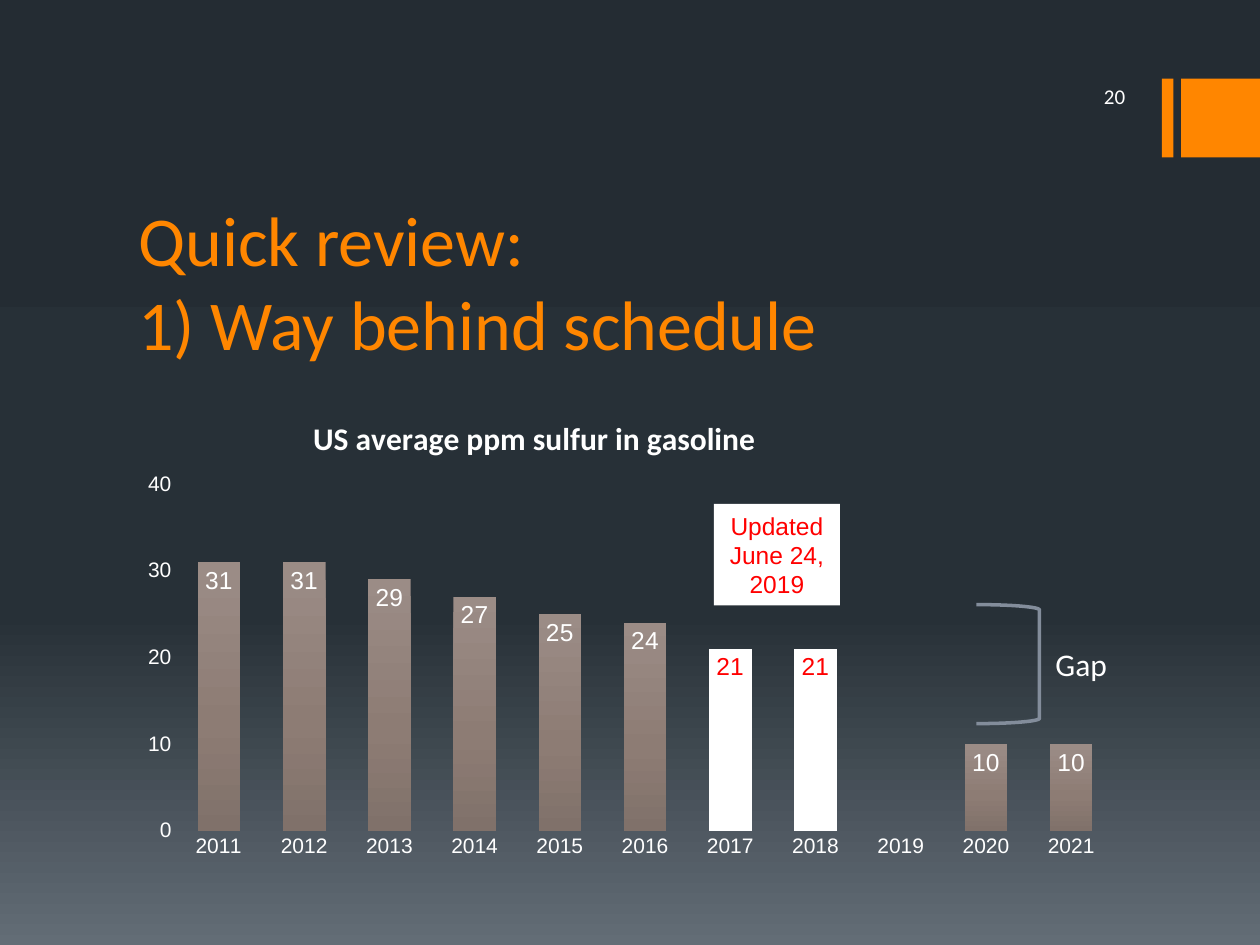
from copy import deepcopy

from lxml import etree
from pptx import Presentation
from pptx.chart.data import CategoryChartData
from pptx.dml.color import RGBColor
from pptx.enum.chart import XL_CHART_TYPE as ChartType, XL_LABEL_POSITION as LabelPos
from pptx.enum.chart import XL_TICK_MARK as TickMark
from pptx.enum.shapes import MSO_SHAPE as Preset
from pptx.enum.text import MSO_ANCHOR as Anchor, PP_ALIGN as Align
from pptx.oxml.ns import qn
from pptx.util import Pt

ORANGE, WHITE, RED, SLATE = "FF8600", "FFFFFF", "FF0000", "838D9B"
BACKDROP = [(0, "242C33"), (0.65, "273037"), (1, "636D76")]
BAR_SHADE = [(0, "9B8C86"), (0.6, "8D7C74"), (1, "80716A")]
SULFUR = {2011: 31, 2012: 31, 2013: 29, 2014: 27, 2015: 25, 2016: 24,
          2017: 21, 2018: 21, 2019: 0, 2020: 10, 2021: 10}
UPDATED_YEARS = (2017, 2018)


def rgb(code):
    """Turn a hex string into a colour."""
    return RGBColor.from_string(code)


def paint(fill, code):
    """Give a fill one solid colour."""
    fill.solid()
    fill.fore_color.rgb = rgb(code)


def shade(fill, stops):
    """Give a fill a three-stop gradient from top to bottom."""
    fill.gradient()
    fill.gradient_angle = 270
    last = fill.gradient_stops[1]._gs
    last.addnext(deepcopy(last))
    for stop, (position, code) in zip(fill.gradient_stops, stops):
        stop.position = position
        stop.color.rgb = rgb(code)


def style(font, name, size, code, bold=False):
    """Set the face, size, weight and colour of a font."""
    font.name, font.size, font.bold = name, Pt(size), bold
    font.color.rgb = rgb(code)


def write(frame, words, face, size, code, align=Align.LEFT, anchor=Anchor.TOP):
    """Put one formatted paragraph into a text frame."""
    frame.word_wrap = True
    frame.vertical_anchor = anchor
    paragraph = frame.paragraphs[0]
    paragraph.text = words
    paragraph.alignment = align
    for run in paragraph.runs:
        style(run.font, face, size, code)


def add_label(slide, box, words, size, code, **placing):
    """Add a Calibri text box."""
    label = slide.shapes.add_textbox(*map(Pt, box))
    write(label.text_frame, words, "Calibri", size, code, **placing)


def add_block(slide, box, code):
    """Add a borderless filled rectangle."""
    block = slide.shapes.add_shape(Preset.RECTANGLE, *map(Pt, box))
    block.shadow.inherit = False
    paint(block.fill, code)
    block.line.fill.background()
    return block


def add_bracket(slide, box):
    """Add the bracket that marks the gap."""
    bracket = slide.shapes.add_shape(Preset.RIGHT_BRACKET, *map(Pt, box))
    bracket.shadow.inherit = False
    bracket.fill.background()
    bracket.line.color.rgb = rgb(SLATE)
    bracket.line.width = Pt(2)


def place(parent, follower, **fractions):
    """Set a manual layout, in fractions of the chart, before the follower tag."""
    for old in parent.findall(qn("c:layout")):
        parent.remove(old)
    layout = etree.Element(qn("c:layout"))
    manual = etree.SubElement(layout, qn("c:manualLayout"))
    settings = {"xMode": "edge", "yMode": "edge", **fractions}
    if "w" in fractions:
        settings = {"layoutTarget": "inner", **settings}
    for tag, value in settings.items():
        etree.SubElement(manual, qn(f"c:{tag}")).set("val", str(value))
    parent.find(qn(follower)).addprevious(layout)


def clean_axis(axis):
    """Show only the labels of an axis."""
    axis.has_major_gridlines = False
    axis.major_tick_mark = axis.minor_tick_mark = TickMark.NONE
    axis.format.line.fill.background()
    style(axis.tick_labels.font, "Arial", 12, WHITE)


def add_sulfur_chart(slide, box):
    """Add the column chart of sulfur by year."""
    data = CategoryChartData(number_format="#,##0")
    data.categories = [str(year) for year in SULFUR]
    data.add_series("Series 1", SULFUR.values())
    chart = slide.shapes.add_chart(ChartType.COLUMN_CLUSTERED, *map(Pt, box), data).chart
    style(chart.font, "Arial", 10, WHITE)
    chart.has_legend = False

    heading = chart.chart_title
    heading.text_frame.text = "US average ppm sulfur in gasoline"
    style(heading.text_frame.paragraphs[0].runs[0].font, "Calibri", 18, WHITE, bold=True)
    heading.include_in_layout = False
    place(heading._element, "c:overlay", x=0.18, y=0.06)

    clean_axis(chart.category_axis)
    clean_axis(chart.value_axis)
    chart.value_axis.minimum_scale, chart.value_axis.maximum_scale = 0, 40
    chart.value_axis.major_unit = 10

    plot = chart.plots[0]
    plot.gap_width, plot.overlap, plot.vary_by_categories = 100, -24, False
    place(plot._element.getparent(), "c:barChart", x=0.05, y=0.21, w=0.93, h=0.71)

    columns = plot.series[0]
    shade(columns.format.fill, BAR_SHADE)
    labels = columns.data_labels
    labels.show_value = True
    labels.number_format, labels.number_format_is_linked = "#,##0;;", False
    labels.position = LabelPos.INSIDE_END
    style(labels.font, "Arial", 14, WHITE)
    for year in UPDATED_YEARS:
        column = columns.points[list(SULFUR).index(year)]
        paint(column.format.fill, WHITE)
        style(column.data_label.font, "Arial", 14, RED)
        column.data_label.position = LabelPos.INSIDE_END


def main():
    """Build and save the slide."""
    deck = Presentation()
    deck.slide_width, deck.slide_height = Pt(720), Pt(540)
    slide = deck.slides.add_slide(deck.slide_layouts[6])
    shade(slide.background.fill, BACKDROP)

    add_block(slide, (664, 45, 6.5, 45), ORANGE)
    add_block(slide, (675, 45, 45, 45), ORANGE)
    add_label(slide, (72, 122, 576, 90), "Quick review: \v1) Way behind schedule",
              40, ORANGE, anchor=Anchor.BOTTOM)
    add_label(slide, (576, 43, 74, 24), "20", 12, WHITE,
              align=Align.RIGHT, anchor=Anchor.MIDDLE)
    add_sulfur_chart(slide, (72, 218, 576, 279))
    add_label(slide, (596, 365, 54, 51), "Gap", 18, WHITE)
    notice = add_block(slide, (408, 288, 72, 58), WHITE)
    write(notice.text_frame, "Updated June 24, 2019", "Arial", 14, RED,
          align=Align.CENTER, anchor=Anchor.MIDDLE)
    add_bracket(slide, (558, 345.5, 36, 68))
    deck.save("out.pptx")


if __name__ == "__main__":
    main()
